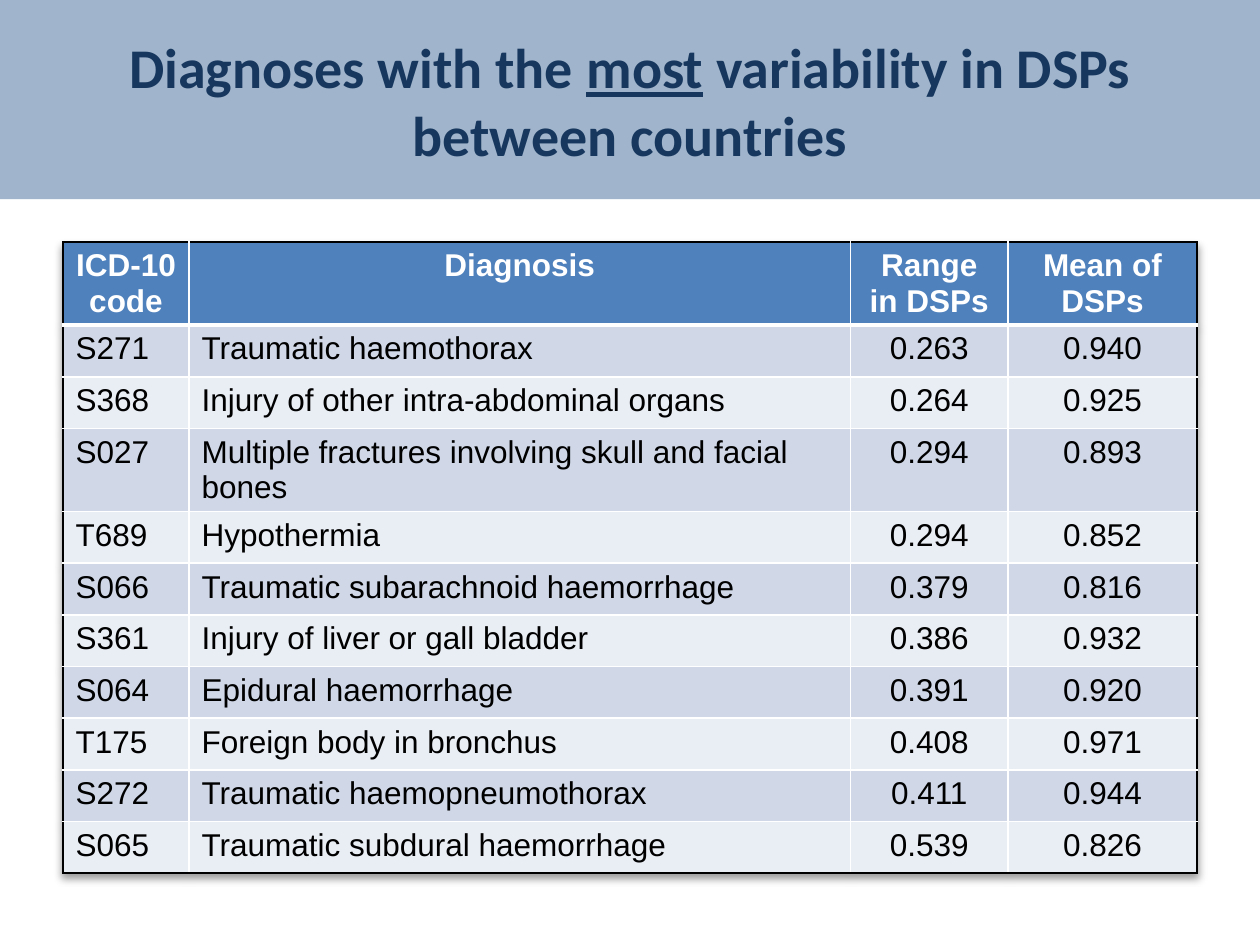
import pptx
import pptx.dml.color
import pptx.enum.shapes
import pptx.enum.text
import pptx.oxml
import pptx.oxml.ns
import pptx.util
from lxml import etree

WIDTH, HEIGHT = 10, 7.5
MARGIN = 0.05 * WIDTH
COLUMN_WIDTHS = [1, 5.25, 1.25, 1.5]
ROW_HEIGHT = 0.41
HEADER = ["ICD-10 code", "Diagnosis", "Range in DSPs", "Mean of DSPs"]
DIAGNOSES = [
    ["S271", "Traumatic haemothorax", "0.263", "0.940"],
    ["S368", "Injury of other intra-abdominal organs", "0.264", "0.925"],
    ["S027", "Multiple fractures involving skull and facial bones", "0.294", "0.893"],
    ["T689", "Hypothermia", "0.294", "0.852"],
    ["S066", "Traumatic subarachnoid haemorrhage", "0.379", "0.816"],
    ["S361", "Injury of liver or gall bladder", "0.386", "0.932"],
    ["S064", "Epidural haemorrhage", "0.391", "0.920"],
    ["T175", "Foreign body in bronchus", "0.408", "0.971"],
    ["S272", "Traumatic haemopneumothorax", "0.411", "0.944"],
    ["S065", "Traumatic subdural haemorrhage", "0.539", "0.826"],
]
INCH = pptx.util.Inches
CENTER = pptx.enum.text.PP_ALIGN.CENTER
LEFT = pptx.enum.text.PP_ALIGN.LEFT


def rgb(value):
    return pptx.dml.color.RGBColor.from_string(value)


def set_font(r, name, size, color, bold):
    r.font.name = name
    r.font.size = pptx.util.Pt(size)
    r.font.color.rgb = rgb(color)
    r.font.bold = bold


def add_band(slide, height, color, opacity):
    """Draw a translucent full-width band behind everything else."""
    sp = slide.shapes.add_shape(pptx.enum.shapes.MSO_SHAPE.RECTANGLE,
                                0, 0, INCH(WIDTH), INCH(height))
    sp.shadow.inherit = False
    sp.line.fill.background()
    sp.fill.solid()
    sp.fill.fore_color.rgb = rgb(color)
    clr = sp.fill._xPr.find(".//" + pptx.oxml.ns.qn("a:srgbClr"))
    etree.SubElement(clr, pptx.oxml.ns.qn("a:alpha"), val=str(opacity * 1000))
    slide.shapes._spTree.insert(2, sp._element)


def set_title(slide, parts):
    """Fill the title from (text, underlined) pairs."""
    title = slide.shapes.title
    title.left, title.top = INCH(MARGIN), INCH(0.17)
    title.width, title.height = INCH(WIDTH - 2 * MARGIN), INCH(1.25)
    tf = title.text_frame
    tf.vertical_anchor = pptx.enum.text.MSO_ANCHOR.MIDDLE
    p = tf.paragraphs[0]
    p.alignment = CENTER
    for text, underlined in parts:
        r = p.add_run()
        r.text = text
        set_font(r, "Calibri", 32, "17375E", True)
        r.font.underline = underlined


def set_borders(cell, borders):
    """Give the cell its lines as (color, points), ordered left, right, top, bottom."""
    tc_pr = cell._tc.get_or_add_tcPr()
    for i, (side, (color, points)) in enumerate(zip("LRTB", borders)):
        tc_pr.insert(i, pptx.oxml.parse_xml(
            f'<a:ln{side} {pptx.oxml.ns.nsdecls("a")} w="{pptx.util.Pt(points)}">'
            f'<a:solidFill><a:srgbClr val="{color}"/></a:solidFill></a:ln{side}>'))


def add_shadow(table):
    table._tbl.tblPr.insert(0, pptx.oxml.parse_xml(
        f'<a:effectLst {pptx.oxml.ns.nsdecls("a")}>'
        '<a:outerShdw blurRad="50800" dist="38100" dir="5400000" algn="t" rotWithShape="0">'
        '<a:srgbClr val="000000"><a:alpha val="40000"/></a:srgbClr>'
        '</a:outerShdw></a:effectLst>'))


def fill_cell(cell, text, fill, color, bold, alignment):
    cell.fill.solid()
    cell.fill.fore_color.rgb = rgb(fill)
    cell.text_frame.text = text
    p = cell.text_frame.paragraphs[0]
    p.alignment = alignment
    set_font(p.runs[0], "Arial", 18, color, bold)


def add_diagnosis_table(slide, rows):
    last_row, last_col = len(rows) - 1, len(COLUMN_WIDTHS) - 1
    table = slide.shapes.add_table(
        len(rows), len(COLUMN_WIDTHS), INCH(MARGIN), INCH(1.92),
        INCH(sum(COLUMN_WIDTHS)), INCH(ROW_HEIGHT * len(rows))).table
    add_shadow(table)
    for column, width in zip(table.columns, COLUMN_WIDTHS):
        column.width = INCH(width)
    outer, inner, rule = ("000000", 1), ("FFFFFF", 1), ("FFFFFF", 3)
    for i, row in enumerate(rows):
        table.rows[i].height = INCH(ROW_HEIGHT)
        for j, text in enumerate(row):
            cell = table.cell(i, j)
            if i == 0:
                fill_cell(cell, text, "4F81BD", "FFFFFF", True, CENTER)
            else:
                fill_cell(cell, text, "D0D8E8" if i % 2 else "E9EDF4",
                          "000000", False, LEFT if j < 2 else CENTER)
            set_borders(cell, [
                outer if j == 0 else inner,
                outer if j == last_col else inner,
                outer if i == 0 else rule if i == 1 else inner,
                outer if i == last_row else rule if i == 0 else inner,
            ])


def main():
    prs = pptx.Presentation()
    prs.slide_width, prs.slide_height = INCH(WIDTH), INCH(HEIGHT)
    slide = prs.slides.add_slide(prs.slide_layouts[5])
    add_band(slide, 1.58, "376092", 47)
    set_title(slide, [("Diagnoses with the ", False), ("most", True),
                      (" variability in DSPs between countries", False)])
    add_diagnosis_table(slide, [HEADER] + DIAGNOSES)
    prs.save("out.pptx")


if __name__ == "__main__":
    main()
